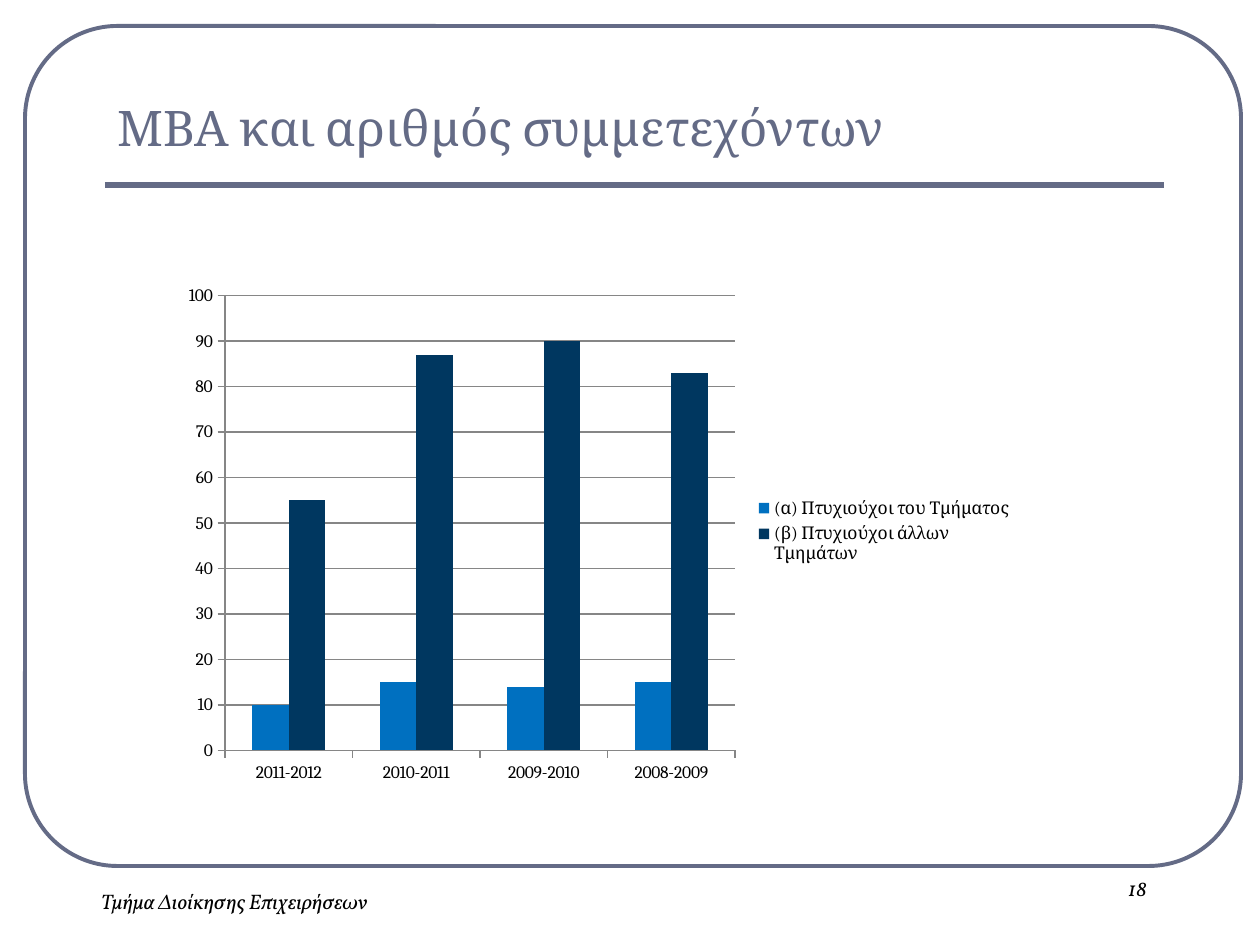
import dataclasses

import lxml.etree
import pptx
import pptx.chart.data
import pptx.dml.color
import pptx.enum.chart
import pptx.enum.shapes
import pptx.enum.text
import pptx.oxml
import pptx.oxml.ns
import pptx.util

PX_PER_INCH = 126
qn = pptx.oxml.ns.qn
MIDDLE, BOTTOM = pptx.enum.text.MSO_ANCHOR.TOP, pptx.enum.text.MSO_ANCHOR.BOTTOM
LEFT, CENTER = pptx.enum.text.PP_ALIGN.LEFT, pptx.enum.text.PP_ALIGN.CENTER


@dataclasses.dataclass(frozen=True)
class Theme:
    accent: str = "646B86"
    text: str = "000000"
    grid: str = "868686"
    heading_font: str = "Cambria"
    footer_font: str = "Vollkorn"
    title_size: int = 28
    footer_size: int = 12
    chart_size: int = 10


@dataclasses.dataclass(frozen=True)
class Box:
    x: int
    y: int
    w: int
    h: int

    def emu(self) -> tuple:
        return px(self.x), px(self.y), px(self.w), px(self.h)


@dataclasses.dataclass(frozen=True)
class Footer:
    text: str
    box: Box


@dataclasses.dataclass(frozen=True)
class Series:
    name: str
    values: tuple
    color: str


THEME = Theme()
FRAME = Box(25, 26, 1216, 840)
TITLE = Box(105, 45, 1061, 118)
CHART = Box(174, 275, 850, 517)
PLOT = Box(226, 294, 510, 454)
LEGEND = Box(752, 494, 264, 76)
FOOTERS = (
    Footer("Τμήμα Διοίκησης Επιχειρήσεων", Box(35, 882, 399, 63)),
    Footer("18", Box(1027, 869, 221, 63)),
)
YEARS = ("2011-2012", "2010-2011", "2009-2010", "2008-2009")
SERIES = (
    Series("(α) Πτυχιούχοι του Τμήματος", (10, 15, 14, 15), "0070C0"),
    Series("(β) Πτυχιούχοι άλλων Τμημάτων", (55, 87, 90, 83), "003760"),
)


def px(n: int) -> int:
    return round(n * pptx.util.Inches(1) / PX_PER_INCH)


def rgb(color: str) -> pptx.dml.color.RGBColor:
    return pptx.dml.color.RGBColor.from_string(color)


def style_line(line, color: str, width: float) -> None:
    line.color.rgb = rgb(color)
    line.width = pptx.util.Pt(width)


def style_font(font, name: str, size: int, color: str) -> None:
    font.name = name
    font.size = pptx.util.Pt(size)
    font.color.rgb = rgb(color)


def add_run(tf, text: str, align):
    p = tf.paragraphs[0]
    p.alignment = align
    r = p.add_run()
    r.text = text
    return r


def add_frame(s) -> None:
    sp = s.shapes.add_shape(pptx.enum.shapes.MSO_SHAPE.ROUNDED_RECTANGLE, *FRAME.emu())
    sp.adjustments[0] = 0.11
    sp.shadow.inherit = False
    sp.fill.background()
    style_line(sp.line, THEME.accent, 2.25)


def add_rule(s) -> None:
    y = px(185)
    line = s.shapes.add_connector(
        pptx.enum.shapes.MSO_CONNECTOR.STRAIGHT, px(105), y, px(1164), y)
    style_line(line.line, THEME.accent, 3)
    lxml.etree.SubElement(line.element.spPr, qn("a:effectLst"))


def set_title(s, text: str) -> None:
    sp = s.shapes.title
    sp.left, sp.top, sp.width, sp.height = TITLE.emu()
    tf = sp.text_frame
    tf.word_wrap = True
    tf.vertical_anchor = BOTTOM
    r = add_run(tf, text, LEFT)
    style_font(r.font, THEME.heading_font, THEME.title_size, THEME.accent)


def add_footer(s, footer: Footer) -> None:
    tf = s.shapes.add_textbox(*footer.box.emu()).text_frame
    tf.word_wrap = True
    r = add_run(tf, footer.text, CENTER)
    style_font(r.font, THEME.footer_font, THEME.footer_size, THEME.text)
    r.font.italic = True


def place_part(parent, index: int, box: Box, inner: bool = False) -> None:
    """Give a chart part a fixed place, in fractions of the chart."""
    for old in parent.findall(qn("c:layout")):
        parent.remove(old)
    layout = parent.makeelement(qn("c:layout"))
    parent.insert(index, layout)
    manual = lxml.etree.SubElement(layout, qn("c:manualLayout"))
    settings = [("layoutTarget", "inner")] if inner else []
    settings += [
        ("xMode", "edge"), ("yMode", "edge"),
        ("x", f"{(box.x - CHART.x) / CHART.w:.2f}"),
        ("y", f"{(box.y - CHART.y) / CHART.h:.2f}"),
        ("w", f"{box.w / CHART.w:.2f}"), ("h", f"{box.h / CHART.h:.2f}"),
    ]
    for tag, value in settings:
        lxml.etree.SubElement(manual, qn(f"c:{tag}")).set("val", value)


def add_chart(s) -> None:
    data = pptx.chart.data.CategoryChartData()
    data.categories = YEARS
    for series in SERIES:
        data.add_series(series.name, series.values)
    kind = pptx.enum.chart.XL_CHART_TYPE.COLUMN_CLUSTERED
    chart = s.shapes.add_chart(kind, *CHART.emu(), data).chart
    chart.has_title = False
    style_font(chart.font, THEME.heading_font, THEME.chart_size, THEME.text)

    # Columns
    plot = chart.plots[0]
    plot.vary_by_categories = False
    plot.gap_width = 150
    plot.overlap = 0
    for drawn, series in zip(plot.series, SERIES):
        drawn.format.fill.solid()
        drawn.format.fill.fore_color.rgb = rgb(series.color)

    # Axes and gridlines
    values = chart.value_axis
    values.minimum_scale, values.maximum_scale, values.major_unit = 0, 100, 10
    values.has_major_gridlines = True
    chart.category_axis.has_major_gridlines = False
    for axis in (values, chart.category_axis):
        axis.major_tick_mark = pptx.enum.chart.XL_TICK_MARK.OUTSIDE
        axis.minor_tick_mark = pptx.enum.chart.XL_TICK_MARK.NONE
        style_line(axis.format.line, THEME.grid, 0.75)
    style_line(values.major_gridlines.format.line, THEME.grid, 0.75)

    # Legend and placement
    chart.has_legend = True
    chart.legend.position = pptx.enum.chart.XL_LEGEND_POSITION.RIGHT
    chart.legend.include_in_layout = False
    root = chart.element.find(qn("c:chart"))
    place_part(root.find(qn("c:plotArea")), 0, PLOT, inner=True)
    place_part(root.find(qn("c:legend")), 1, LEGEND)


def main() -> None:
    prs = pptx.Presentation()
    prs.slide_width, prs.slide_height = px(1260), px(945)
    s = prs.slides.add_slide(prs.slide_layouts.get_by_name("Title Only"))
    add_frame(s)
    add_rule(s)
    set_title(s, "ΜΒΑ και αριθμός συμμετεχόντων")
    for footer in FOOTERS:
        add_footer(s, footer)
    add_chart(s)
    prs.save("out.pptx")


if __name__ == "__main__":
    main()
